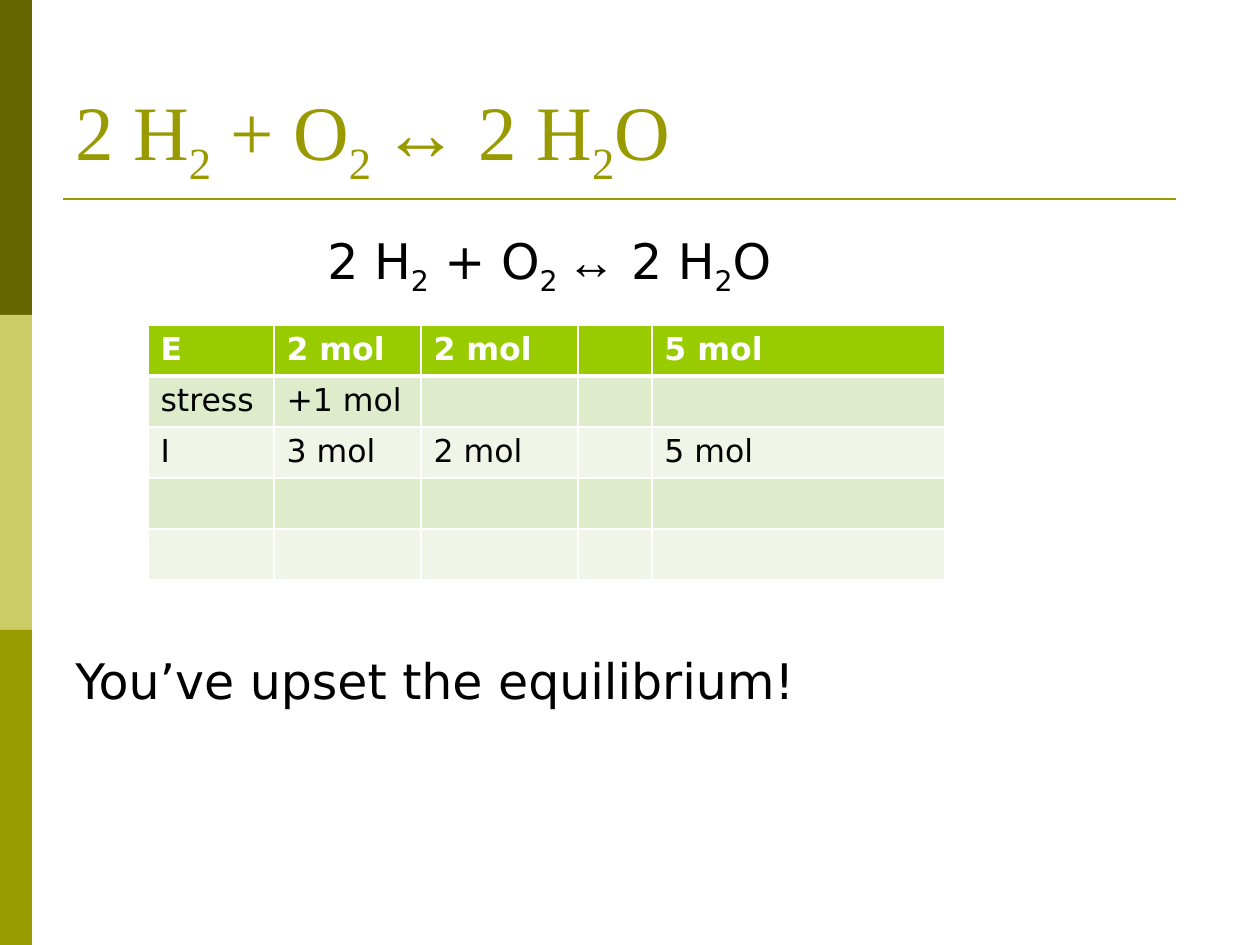
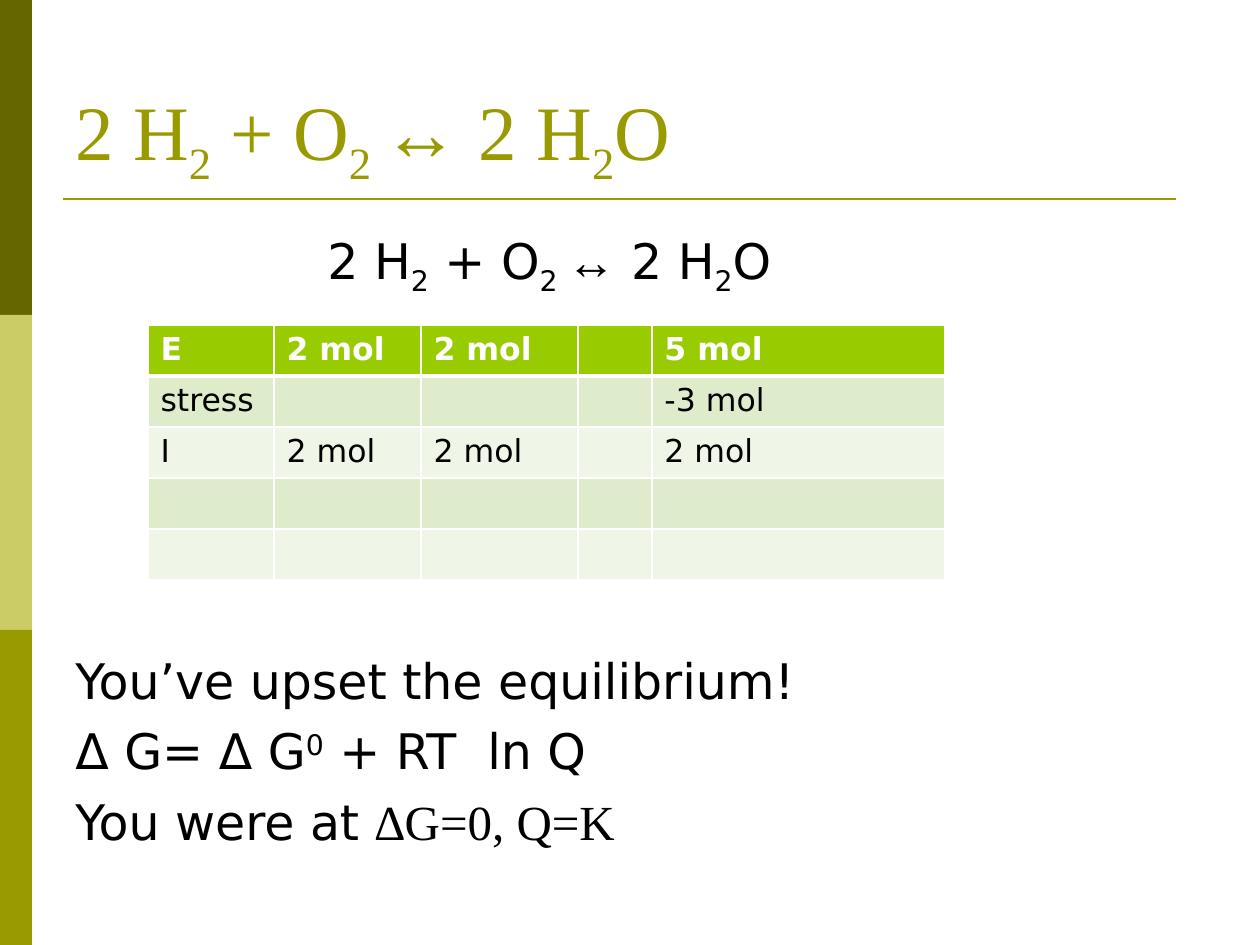
"""Build two slides on disturbing the equilibrium of water formation."""
from lxml.etree import SubElement
from pptx import Presentation
from pptx.dml.color import RGBColor
from pptx.enum.shapes import MSO_CONNECTOR as CONN, MSO_SHAPE as SHAPE
from pptx.enum.text import MSO_ANCHOR as ANCHOR
from pptx.oxml.ns import qn
from pptx.util import Emu, Pt

SANS, SERIF = "DejaVu Sans", "Times New Roman"
OLIVE, BLACK, WHITE = "999900", "000000", "FFFFFF"
BARS = ["666600", "CCCC66", OLIVE]
HEADER, BANDS = "99CC00", ["DEECCC", "EFF6E7"]
SUB, SUPER = -25, 30

EQUATION = [("2 H",), ("2", SUB), (" + O",), ("2 ", SUB), ("↔", 0, SERIF),
            (" 2 H",), ("2", SUB), ("O",)]
UPSET = [("You’ve upset the equilibrium!",)]
FREE_ENERGY = [("Δ G= Δ G",), ("0", SUPER), (" + RT  ln Q",)]
AT_BALANCE = [("You were at ",), ("∆G=0, Q=K", 0, SERIF)]

START = ["E", "2 mol", "2 mol", "", "5 mol"]
EMPTY = [""] * len(START)
SLIDES = [
    {"rows": [START, ["stress", "+1 mol", "", "", ""],
              ["I", "3 mol", "2 mol", "", "5 mol"], EMPTY, EMPTY],
     "notes": [UPSET]},
    {"rows": [START, ["stress", "", "", "", "-3 mol"],
              ["I", "2 mol", "2 mol", "", "2 mol"], EMPTY, EMPTY],
     "notes": [UPSET, FREE_ENERGY, AT_BALANCE]},
]

WIDTH, HEIGHT, BAR_WIDTH = 1260, 945, 32
RULE = (63, 199, 1176, 199)
TITLE_BOX = (63, 38, 1134, 157)
EQUATION_BOX = (315, 224, 600, 70)
NOTES_BOX = (63, 644, 1134, 200)
TABLE_LEFT, TABLE_TOP, ROW_HEIGHT = 148, 325, 51
COLUMNS = [126, 147, 157, 74, 293]


def px(*lengths):
    return [Emu(round(n * 914400 / 126)) for n in lengths]


def rgb(color):
    return RGBColor.from_string(color)


def style(font, name, size, color, bold=False):
    font.name, font.size, font.bold = name, Pt(size), bold
    font.color.rgb = rgb(color)


def add_text(s, box, lines, face, size, color, anchor=ANCHOR.TOP):
    tf = s.shapes.add_textbox(*px(*box)).text_frame
    tf.word_wrap, tf.vertical_anchor = True, anchor
    for i, line in enumerate(lines):
        p = tf.add_paragraph() if i else tf.paragraphs[0]
        p.space_before = Pt(6.8 if i else 0)
        for text, base, name in ((*run, 0, face)[:3] if len(run) < 3 else run
                                 for run in line):
            r = p.add_run()
            r.text = text
            style(r.font, name or face, size, color)
            if base:
                r.font._element.set("baseline", str(base * 1000))


def add_frame(s):
    bar_height = HEIGHT // len(BARS)
    for i, color in enumerate(BARS):
        bar = s.shapes.add_shape(SHAPE.RECTANGLE, *px(0, i * bar_height, BAR_WIDTH, bar_height))
        bar.shadow.inherit = False
        bar.fill.solid()
        bar.fill.fore_color.rgb = rgb(color)
        bar.line.fill.background()
    rule = s.shapes.add_connector(CONN.STRAIGHT, *px(*RULE))
    rule.line.color.rgb, rule.line.width = rgb(OLIVE), Pt(1.5)
    SubElement(rule._element.spPr, qn("a:effectLst"))


def add_borders(cell, top, bottom):
    tc_pr = cell._tc.get_or_add_tcPr()
    for side, points in zip("LRTB", (1, 1, top, bottom)):
        ln = SubElement(tc_pr, qn(f"a:ln{side}"), w=str(Pt(points)))
        SubElement(SubElement(ln, qn("a:solidFill")), qn("a:srgbClr"), val=WHITE)


def add_mole_table(s, rows):
    box = px(TABLE_LEFT, TABLE_TOP, sum(COLUMNS), ROW_HEIGHT * len(rows))
    table = s.shapes.add_table(len(rows), len(COLUMNS), *box).table
    for column, width in zip(table.columns, px(*COLUMNS)):
        column.width = width
    for i, row in enumerate(rows):
        table.rows[i].height = px(ROW_HEIGHT)[0]
        for j, text in enumerate(row):
            cell = table.cell(i, j)
            add_borders(cell, 3 if i == 1 else 1, 3 if i == 0 else 1)
            cell.fill.solid()
            cell.fill.fore_color.rgb = rgb(BANDS[(i - 1) % 2] if i else HEADER)
            cell.text = text
            p = cell.text_frame.paragraphs[0]
            style(p.font, SANS, 18, BLACK if i else WHITE, i == 0)
            for r in p.runs:
                style(r.font, SANS, 18, BLACK if i else WHITE, i == 0)


def main():
    prs = Presentation()
    prs.slide_width, prs.slide_height = px(WIDTH, HEIGHT)
    for content in SLIDES:
        s = prs.slides.add_slide(prs.slide_layouts[6])
        add_frame(s)
        add_text(s, TITLE_BOX, [EQUATION], SERIF, 44, OLIVE, ANCHOR.BOTTOM)
        add_text(s, EQUATION_BOX, [EQUATION], SANS, 28, BLACK)
        add_text(s, NOTES_BOX, content["notes"], SANS, 28, BLACK)
        add_mole_table(s, content["rows"])
    prs.save("out.pptx")


if __name__ == "__main__":
    main()
